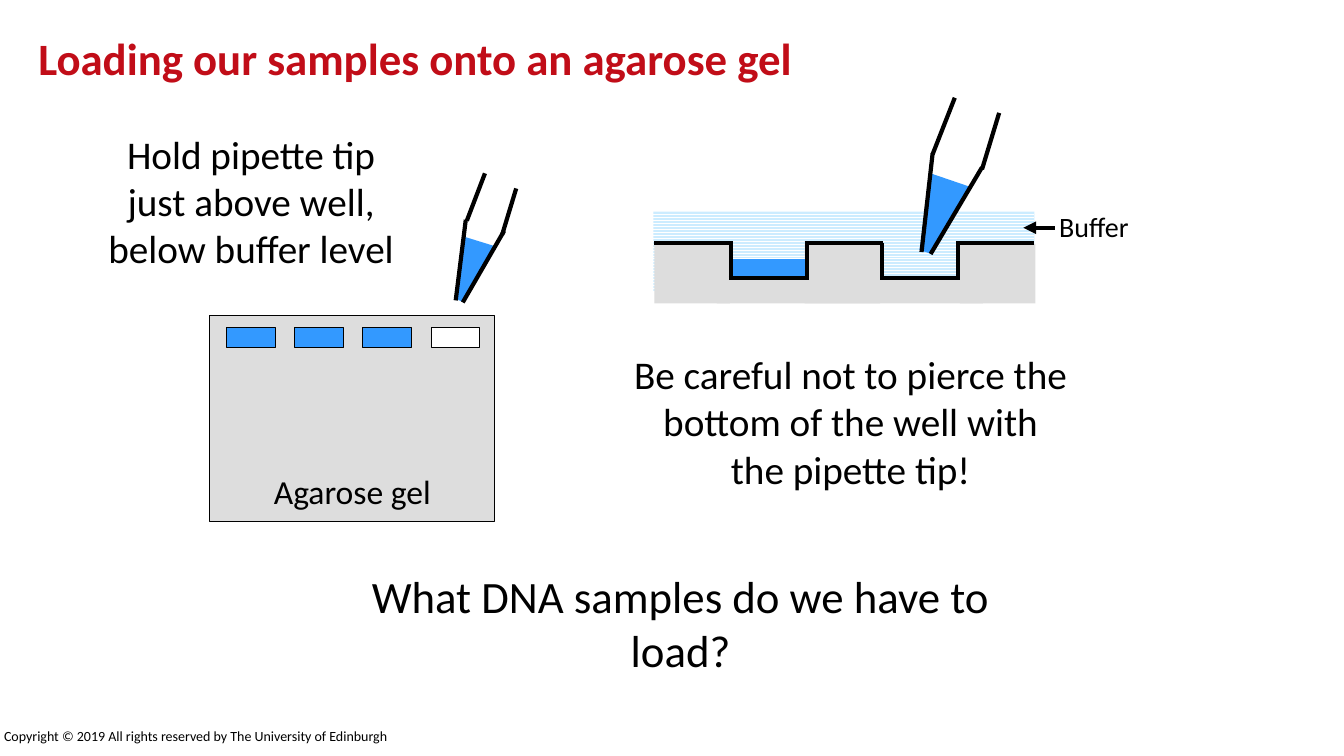
from dataclasses import dataclass

from lxml import etree
from pptx import Presentation
from pptx.dml.color import RGBColor
from pptx.enum.dml import MSO_PATTERN
from pptx.enum.shapes import MSO_CONNECTOR, MSO_SHAPE
from pptx.enum.text import MSO_ANCHOR, PP_ALIGN
from pptx.oxml.ns import qn
from pptx.util import Inches, Pt

BLACK = RGBColor(0x00, 0x00, 0x00)
WHITE = RGBColor(0xFF, 0xFF, 0xFF)
RED = RGBColor(0xC1, 0x0D, 0x18)
SAMPLE_BLUE = RGBColor(0x33, 0x99, 0xFF)
BUFFER_BLUE = RGBColor(0xCC, 0xEC, 0xFF)
GEL_GREY = RGBColor(0xDD, 0xDD, 0xDD)
FONT = "Calibri"
RECTANGLE = MSO_SHAPE.RECTANGLE
STRAIGHT = MSO_CONNECTOR.STRAIGHT
LEFT, CENTER = PP_ALIGN.LEFT, PP_ALIGN.CENTER
MIDDLE, TOP = MSO_ANCHOR.MIDDLE, MSO_ANCHOR.TOP
ZIG_ZAG = MSO_PATTERN.ZIG_ZAG

Point = tuple[float, float]


@dataclass(frozen=True)
class Box:
    left: float
    top: float
    width: float
    height: float

    def lengths(self) -> list[int]:
        return [Inches(v) for v in (self.left, self.top, self.width, self.height)]


@dataclass(frozen=True)
class Pipette:
    liquid: list[Point]
    walls: list[tuple[Point, Point]]


@dataclass(frozen=True)
class Label:
    text: str
    box: Box
    size: int
    align: PP_ALIGN = CENTER
    wrap: bool = True
    inset: float | None = None


def write_text(shape, text: str, *, size: int, color: RGBColor = BLACK, bold: bool = False,
               align: PP_ALIGN = CENTER, anchor: MSO_ANCHOR = TOP, wrap: bool = True,
               line_spacing: float = 1.0, inset: float | None = None) -> None:
    frame = shape.text_frame
    frame.word_wrap = wrap
    frame.vertical_anchor = anchor
    if inset is not None:
        frame.margin_left = frame.margin_right = Inches(inset)
        frame.margin_top = frame.margin_bottom = Inches(inset)
    paragraph = frame.paragraphs[0]
    paragraph.alignment = align
    paragraph.line_spacing = line_spacing
    run = paragraph.add_run()
    run.text = text
    run.font.name = FONT
    run.font.size = Pt(size)
    run.font.bold = bold
    run.font.color.rgb = color


def add_label(slide, label: Label) -> None:
    shape = slide.shapes.add_textbox(*label.box.lengths())
    write_text(shape, label.text, size=label.size, align=label.align,
               wrap=label.wrap, inset=label.inset)


def fill_plain(shape, fill: RGBColor, outlined: bool = False) -> None:
    shape.shadow.inherit = False
    shape.fill.solid()
    shape.fill.fore_color.rgb = fill
    if outlined:
        shape.line.color.rgb = BLACK
        shape.line.width = Pt(0.75)
    else:
        shape.line.fill.background()


def add_block(slide, box: Box, fill: RGBColor, outlined: bool = False):
    shape = slide.shapes.add_shape(RECTANGLE, *box.lengths())
    fill_plain(shape, fill, outlined)
    return shape


def add_line(slide, start: Point, end: Point, color: RGBColor = BLACK,
             arrow: bool = False) -> None:
    connector = slide.shapes.add_connector(STRAIGHT, *[Inches(v) for v in start + end])
    connector.line.color.rgb = color
    connector.line.width = Pt(3)
    if arrow:
        line = connector.line._get_or_add_ln()
        etree.SubElement(line, qn("a:tailEnd"), type="triangle")
    etree.SubElement(connector._element.spPr, qn("a:effectLst"))


def add_pipette(slide, pipette: Pipette) -> None:
    points = [(Inches(x), Inches(y)) for x, y in pipette.liquid]
    builder = slide.shapes.build_freeform(*points[0])
    builder.add_line_segments(points[1:], close=True)
    fill_plain(builder.convert_to_shape(), SAMPLE_BLUE)
    for start, end in pipette.walls:
        add_line(slide, start, end)


GEL_PIPETTE = Pipette(
    [(4.61, 2.35), (4.51, 2.96), (4.6, 3.0), (4.9, 2.44)],
    [((4.62, 2.18), (4.52, 2.98)), ((5.0, 2.29), (4.59, 3.0)),
     ((4.81, 1.72), (4.63, 2.19)), ((5.12, 1.87), (4.98, 2.33))])
WELL_PIPETTE = Pipette(
    [(9.23, 1.72), (9.12, 2.48), (9.24, 2.52), (9.61, 1.85)],
    [((9.25, 1.52), (9.14, 2.5)), ((9.74, 1.66), (9.23, 2.52)),
     ((9.47, 0.97), (9.25, 1.53)), ((9.91, 1.12), (9.74, 1.68))])

LABELS = [
    Label("Hold pipette tip just above well, below buffer level",
          Box(0.95, 1.24, 3.08, 1.51), 28),
    Label("Be careful not to pierce the bottom of the well with the pipette tip!",
          Box(6.19, 3.43, 4.49, 1.51), 28),
    Label("Agarose gel", Box(2.61, 4.62, 1.77, 0.5), 24, wrap=False),
    Label("Buffer", Box(10.32, 2.03, 1.06, 0.44), 20, wrap=False),
    Label("What DNA samples do we have to load?", Box(3.41, 5.59, 6.68, 1.18), 32),
    Label("Copyright © 2019 All rights reserved by The University of Edinburgh",
          Box(0, 7.18, 3.92, 0.3), 10, align=LEFT, inset=0.04),
]


def draw_gel_from_above(slide) -> None:
    add_pipette(slide, GEL_PIPETTE)
    add_block(slide, Box(2.08, 3.13, 2.83, 2.04), GEL_GREY, outlined=True)
    for index, fill in enumerate([SAMPLE_BLUE] * 3 + [WHITE]):
        add_block(slide, Box(2.25 + 0.675 * index, 3.25, 0.48, 0.2), fill, outlined=True)


def draw_gel_cross_section(slide) -> None:
    surface, floor, well_width, overlap = 2.41, 2.76, 0.75, 0.02
    well_lefts = (7.25, 8.75)

    # Buffer and gel
    buffer = add_block(slide, Box(6.48, 2.1, 3.78, 0.79), BUFFER_BLUE)
    buffer.fill.patterned()
    buffer.fill.pattern = ZIG_ZAG
    buffer.fill.fore_color.rgb = WHITE
    buffer.fill.back_color.rgb = BUFFER_BLUE
    add_block(slide, Box(7.11, 2.77, 2.64, 0.24), GEL_GREY)
    for left in (6.49, 7.98, 9.52):
        add_block(slide, Box(left, 2.42, 0.75, 0.59), GEL_GREY)
    add_block(slide, Box(7.26, 2.57, 0.74, 0.17), SAMPLE_BLUE)

    # Gel surface and well outlines
    for left in (6.49, 7.98, 9.48):
        add_line(slide, (left, surface), (left + 0.78, surface))
    for left in well_lefts:
        right = left + well_width
        for x in (left, right):
            add_line(slide, (x, surface), (x, floor))
        add_line(slide, (left - overlap, floor), (right + overlap, floor))
    add_line(slide, (6.5, 3.04), (10.3, 3.04), WHITE)

    add_pipette(slide, WELL_PIPETTE)
    add_line(slide, (10.46, 2.26), (10.15, 2.26), arrow=True)


def main() -> None:
    presentation = Presentation()
    presentation.slide_width = Inches(13.33)
    presentation.slide_height = Inches(7.5)
    slide = presentation.slides.add_slide(presentation.slide_layouts[5])

    # Title
    title = slide.shapes.title
    title.left, title.top, title.width, title.height = Box(0.28, 0.25, 12.56, 0.71).lengths()
    write_text(title, "Loading our samples onto an agarose gel", size=32, color=RED,
               bold=True, align=LEFT, anchor=MIDDLE, line_spacing=0.9)

    # Drawings and their labels
    draw_gel_from_above(slide)
    draw_gel_cross_section(slide)
    for label in LABELS:
        add_label(slide, label)

    presentation.save("out.pptx")


if __name__ == "__main__":
    main()
